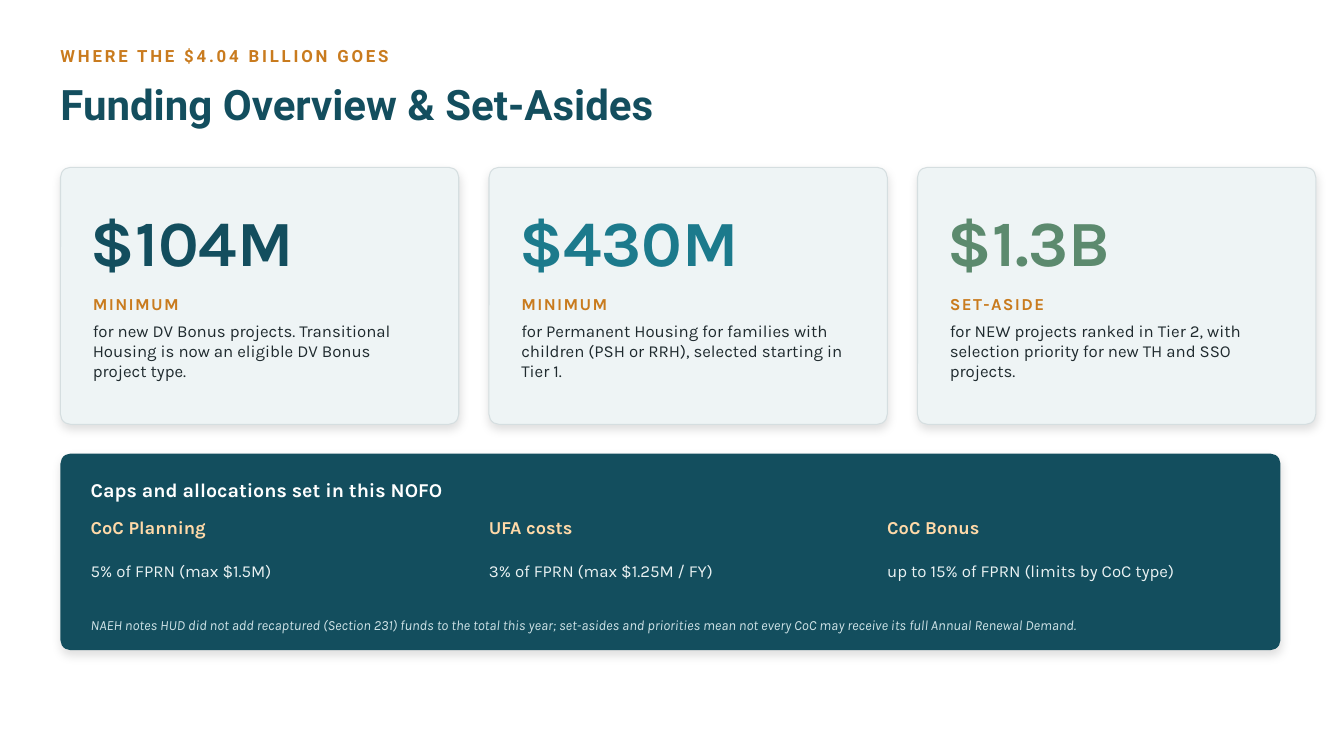
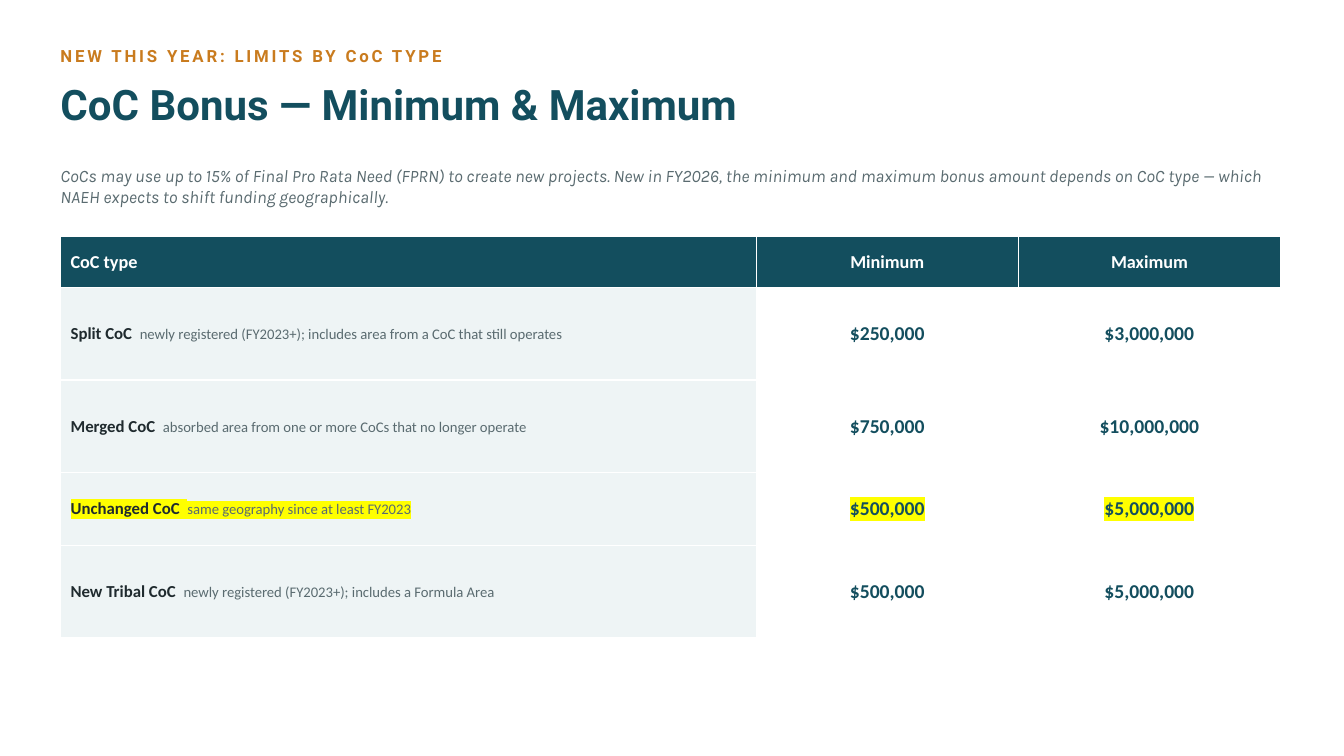
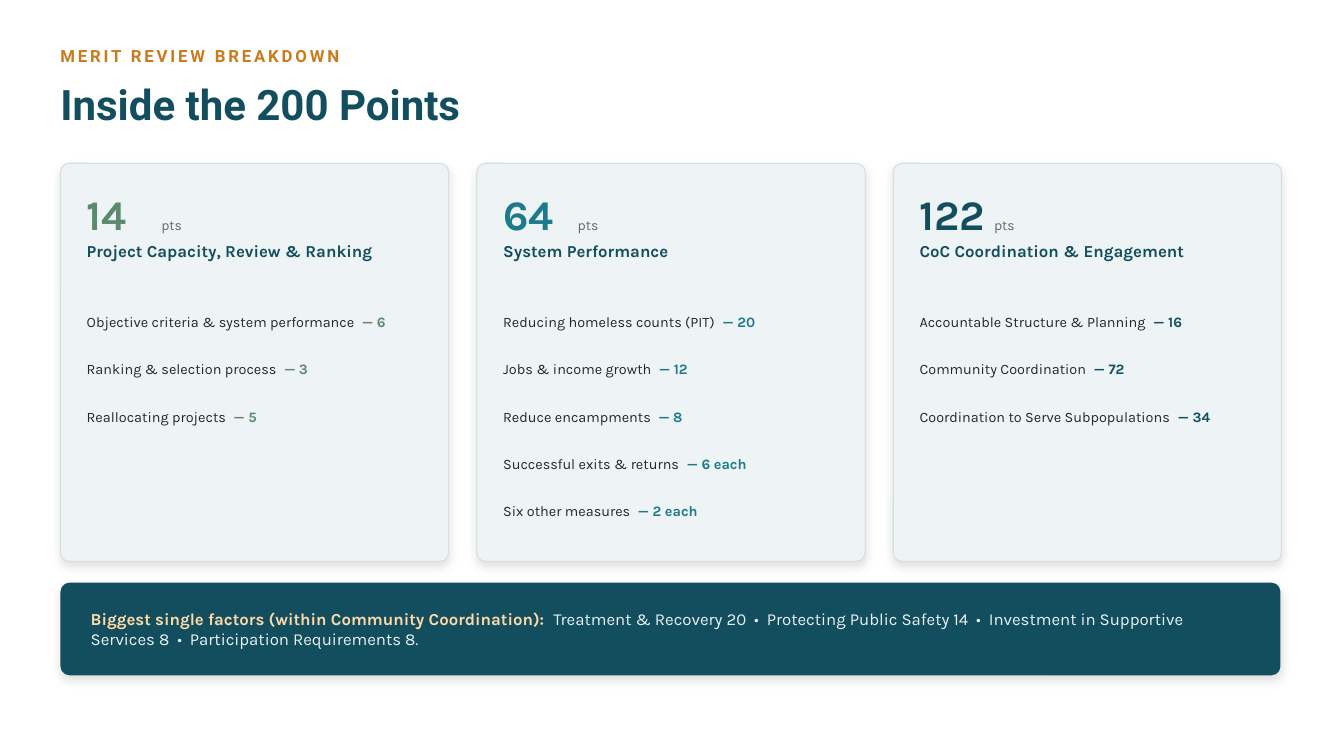
"""Build three slides on funding set-asides, bonus limits and merit review points."""
from dataclasses import dataclass
from typing import Any, NamedTuple

from lxml.etree import SubElement
from pptx import Presentation
from pptx.dml.color import RGBColor
from pptx.enum.shapes import MSO_SHAPE
from pptx.enum.text import MSO_ANCHOR, PP_ALIGN
from pptx.oxml.ns import qn
from pptx.oxml.xmlchemy import OxmlElement
from pptx.util import Emu, Pt

PX = 9144


@dataclass(frozen=True)
class Theme:
    """Colours, fonts and type sizes shared by all slides."""

    navy: str = "134E5E"
    teal: str = "1C7A8C"
    green: str = "5C8A6E"
    orange: str = "C97B1E"
    peach: str = "FFD9A8"
    ink: str = "1F2A2E"
    grey: str = "5A6B70"
    pale: str = "EEF4F5"
    edge: str = "D5DEE0"
    mist: str = "EAF2F3"
    haze: str = "CFE3E7"
    white: str = "FFFFFF"
    yellow: str = "FFFF00"
    shade: str = "000000"
    head_font: str = "Roboto"
    body_font: str = "Karla"
    table_font: str = "Calibri"
    hero: float = 46
    title: float = 30
    amount: float = 14
    heading: float = 13
    intro: float = 12.5
    body: float = 12
    detail: float = 10.5
    item: float = 10.3
    small: float = 10


T = Theme()


class Box(NamedTuple):
    """Left, top, width and height in px."""

    x: int
    y: int
    w: int
    h: int


class SetAside(NamedTuple):
    """A funding card."""

    amount: str
    color: str
    kind: str
    detail: str


class Cap(NamedTuple):
    """A capped allocation."""

    name: str
    limit: str


class CocType(NamedTuple):
    """A row of the bonus table."""

    name: str
    detail: str
    low: str
    high: str
    height: int = 92
    marked: bool = False


class Review(NamedTuple):
    """A merit review card with its scored items."""

    points: str
    color: str
    name: str
    items: tuple[tuple[str, str], ...]


SET_ASIDES = (
    SetAside("$104M", T.navy, "MINIMUM",
             "for new DV Bonus projects. Transitional Housing is now an eligible DV Bonus project type."),
    SetAside("$430M", T.teal, "MINIMUM",
             "for Permanent Housing for families with children (PSH or RRH), selected starting in Tier 1."),
    SetAside("$1.3B", T.green, "SET-ASIDE",
             "for NEW projects ranked in Tier 2, with selection priority for new TH and SSO projects."),
)
CAPS = (
    Cap("CoC Planning", "5% of FPRN (max $1.5M)"),
    Cap("UFA costs", "3% of FPRN (max $1.25M / FY)"),
    Cap("CoC Bonus", "up to 15% of FPRN (limits by CoC type)"),
)
COC_TYPES = (
    CocType("Split CoC", "newly registered (FY2023+); includes area from a CoC that still operates",
            "$250,000", "$3,000,000"),
    CocType("Merged CoC", "absorbed area from one or more CoCs that no longer operate",
            "$750,000", "$10,000,000"),
    CocType("Unchanged CoC", "same geography since at least FY2023",
            "$500,000", "$5,000,000", 72, True),
    CocType("New Tribal CoC", "newly registered (FY2023+); includes a Formula Area",
            "$500,000", "$5,000,000"),
)
REVIEWS = (
    Review("14", T.green, "Project Capacity, Review & Ranking", (
        ("Objective criteria & system performance", "6"),
        ("Ranking & selection process", "3"),
        ("Reallocating projects", "5"))),
    Review("64", T.teal, "System Performance", (
        ("Reducing homeless counts (PIT)", "20"),
        ("Jobs & income growth", "12"),
        ("Reduce encampments", "8"),
        ("Successful exits & returns", "6 each"),
        ("Six other measures", "2 each"))),
    Review("122", T.navy, "CoC Coordination & Engagement", (
        ("Accountable Structure & Planning", "16"),
        ("Community Coordination", "72"),
        ("Coordination to Serve Subpopulations", "34"))),
)


def emu(box: Box) -> list[Emu]:
    """Turn a px box into EMU lengths."""
    return [Emu(v * PX) for v in box]


def write(p: Any, text: str, *, size: float = T.body, color: str = T.ink, font: str = T.body_font,
          bold: bool = False, italic: bool = False, spacing: int = 0, mark: str = "") -> None:
    """Add a formatted run to a paragraph."""
    r = p.add_run()
    r.text = text
    f = r.font
    f.size, f.name, f.bold, f.italic = Pt(size), font, bold, italic
    f.color.rgb = RGBColor.from_string(color)
    rpr = r._r.get_or_add_rPr()
    if spacing:
        rpr.set("spc", str(spacing * 100))
    if mark:
        hl = OxmlElement("a:highlight")
        SubElement(hl, qn("a:srgbClr")).set("val", mark)
        rpr.find(qn("a:solidFill")).addnext(hl)


def frame(s: Any, box: Box, middle: bool = True) -> Any:
    """Add a wrapping text box without margins and return its text frame."""
    tf = s.shapes.add_textbox(*emu(box)).text_frame
    tf.word_wrap = True
    tf.margin_left = tf.margin_top = tf.margin_right = tf.margin_bottom = 0
    tf.vertical_anchor = MSO_ANCHOR.MIDDLE if middle else MSO_ANCHOR.TOP
    return tf


def label(s: Any, box: Box, text: str, *, middle: bool = True, line: float | None = None,
          **fmt: Any) -> Any:
    """Add a one-paragraph text box and return its paragraph."""
    p = frame(s, box, middle).paragraphs[0]
    p.line_spacing = line
    write(p, text, **fmt)
    return p


def panel(s: Any, box: Box, radius: int, fill: str, edge: str = "") -> None:
    """Add a rounded panel with a soft shadow."""
    sp = s.shapes.add_shape(MSO_SHAPE.ROUNDED_RECTANGLE, *emu(box))
    sp.adjustments[0] = radius / box.h
    sp.fill.solid()
    sp.fill.fore_color.rgb = RGBColor.from_string(fill)
    if edge:
        sp.line.color.rgb = RGBColor.from_string(edge)
        sp.line.width = Pt(0.75)
    else:
        sp.line.fill.background()
    sp.shadow.inherit = False
    shadow = SubElement(sp._element.spPr.find(qn("a:effectLst")), qn("a:outerShdw"))
    for key, value in (("blurRad", Pt(7)), ("dist", Pt(3)), ("dir", 5400000), ("rotWithShape", 0)):
        shadow.set(key, str(int(value)))
    clr = SubElement(shadow, qn("a:srgbClr"))
    clr.set("val", T.shade)
    SubElement(clr, qn("a:alpha")).set("val", "12000")


def new_slide(prs: Any, kicker: str, title: str) -> Any:
    """Add a blank slide with its kicker and title."""
    s = prs.slides.add_slide(prs.slide_layouts[6])
    label(s, Box(60, 40, 1210, 30), kicker, font=T.head_font, color=T.orange, bold=True, spacing=2)
    label(s, Box(60, 70, 1210, 66), title, font=T.head_font, size=T.title, color=T.navy, bold=True)
    return s


def style_cell(cell: Any, fill: str, centred: bool) -> Any:
    """Set fill, white borders and alignment, and return the paragraph."""
    if fill:
        cell.fill.solid()
        cell.fill.fore_color.rgb = RGBColor.from_string(fill)
    else:
        cell.fill.background()
    tcpr = cell._tc.get_or_add_tcPr()
    for i, side in enumerate("LRTB"):
        ln = OxmlElement(f"a:ln{side}")
        ln.set("w", str(int(Pt(1))))
        clr = SubElement(SubElement(ln, qn("a:solidFill")), qn("a:srgbClr"))
        clr.set("val", T.white)
        tcpr.insert(i, ln)
    cell.vertical_anchor = MSO_ANCHOR.MIDDLE
    p = cell.text_frame.paragraphs[0]
    p.alignment = PP_ALIGN.CENTER if centred else PP_ALIGN.LEFT
    return p


def funding_slide(prs: Any) -> None:
    """Build the set-aside cards and the caps panel."""
    s = new_slide(prs, "WHERE THE $4.04 BILLION GOES", "Funding Overview & Set-Asides")
    for i, card in enumerate(SET_ASIDES):
        x = 60 + 425 * i
        panel(s, Box(x, 166, 395, 255), 10, T.pale, T.edge)
        label(s, Box(x + 30, 194, 335, 90), card.amount, size=T.hero, color=card.color, bold=True)
        label(s, Box(x + 32, 286, 335, 30), card.kind, color=T.orange, bold=True, spacing=1)
        label(s, Box(x + 32, 318, 331, 90), card.detail, middle=False)
    panel(s, Box(60, 450, 1210, 195), 10, T.navy)
    label(s, Box(90, 468, 1150, 36), "Caps and allocations set in this NOFO",
          size=T.amount, color=T.white, bold=True)
    for i, cap in enumerate(CAPS):
        tf = frame(s, Box(90 + 395 * i, 512, 370, 90), middle=False)
        name, limit = tf.paragraphs[0], tf.add_paragraph()
        name.line_spacing = limit.line_spacing = 1.02
        limit.space_before = Pt(15.5)
        write(name, cap.name, size=T.heading, color=T.peach, bold=True)
        write(limit, cap.limit, color=T.mist)
    label(s, Box(90, 600, 1150, 40),
          "NAEH notes HUD did not add recaptured (Section 231) funds to the total this year; set-asides "
          "and priorities mean not every CoC may receive its full Annual Renewal Demand.",
          size=T.small, color=T.haze, italic=True)


def bonus_slide(prs: Any) -> None:
    """Build the bonus limits table."""
    s = new_slide(prs, "NEW THIS YEAR: LIMITS BY CoC TYPE", "CoC Bonus — Minimum & Maximum")
    label(s, Box(60, 155, 1210, 60),
          "CoCs may use up to 15% of Final Pro Rata Need (FPRN) to create new projects. New in FY2026, "
          "the minimum and maximum bonus amount depends on CoC type — which NAEH expects to shift "
          "funding geographically.", size=T.intro, color=T.grey, italic=True)
    heights = [50, *(row.height for row in COC_TYPES)]
    box = Box(60, 235, 1210, sum(heights))
    table = s.shapes.add_table(len(heights), 3, *emu(box)).table
    table.first_row = table.horz_banding = False
    for column, width in zip(table.columns, (690, 260, 260)):
        column.width = Emu(width * PX)
    for row, height in zip(table.rows, heights):
        row.height = Emu(height * PX)
    for c, text in enumerate(("CoC type", "Minimum", "Maximum")):
        p = style_cell(table.cell(0, c), T.navy, c > 0)
        write(p, text, size=T.heading, color=T.white, font=T.table_font, bold=True)
    for n, coc in enumerate(COC_TYPES, 1):
        mark = T.yellow if coc.marked else ""
        p = style_cell(table.cell(n, 0), T.pale, False)
        write(p, f"{coc.name}  ", font=T.table_font, bold=True, mark=mark)
        write(p, coc.detail, size=T.detail, color=T.grey, font=T.table_font, mark=mark)
        for c, text in enumerate((coc.low, coc.high), 1):
            p = style_cell(table.cell(n, c), "", True)
            write(p, text, size=T.amount, color=T.navy, font=T.table_font, bold=True, mark=mark)


def points_slide(prs: Any) -> None:
    """Build the merit review cards and the factors panel."""
    s = new_slide(prs, "MERIT REVIEW BREAKDOWN", "Inside the 200 Points")
    for i, review in enumerate(REVIEWS):
        x = 60 + 413 * i
        left = x + 26
        panel(s, Box(x, 162, 385, 395), 9, T.pale, T.edge)
        label(s, Box(left, 182, 120, 60), review.points, size=T.title, color=review.color, bold=True)
        label(s, Box(left + 74, 208, 60, 30), "pts", size=T.small, color=T.grey)
        label(s, Box(left, 240, 335, 60), review.name, middle=False, line=0.95,
              color=T.navy, bold=True)
        for j, (item, score) in enumerate(review.items):
            p = label(s, Box(left, 312 + 47 * j, 335, 46), item, middle=False, line=0.94, size=T.item)
            write(p, f"  — {score}", size=T.item, color=review.color, bold=True)
    panel(s, Box(60, 578, 1210, 92), 9, T.navy)
    p = label(s, Box(90, 578, 1150, 92), "Biggest single factors (within Community Coordination):  ",
              color=T.peach, bold=True)
    write(p, "Treatment & Recovery 20  •  Protecting Public Safety 14  •  Investment in Supportive "
             "Services 8  •  Participation Requirements 8.", color=T.mist)


def main() -> None:
    """Build and save the presentation."""
    prs = Presentation()
    prs.slide_width, prs.slide_height = Emu(1333 * PX), Emu(750 * PX)
    for build in (funding_slide, bonus_slide, points_slide):
        build(prs)
    prs.save("out.pptx")


if __name__ == "__main__":
    main()
